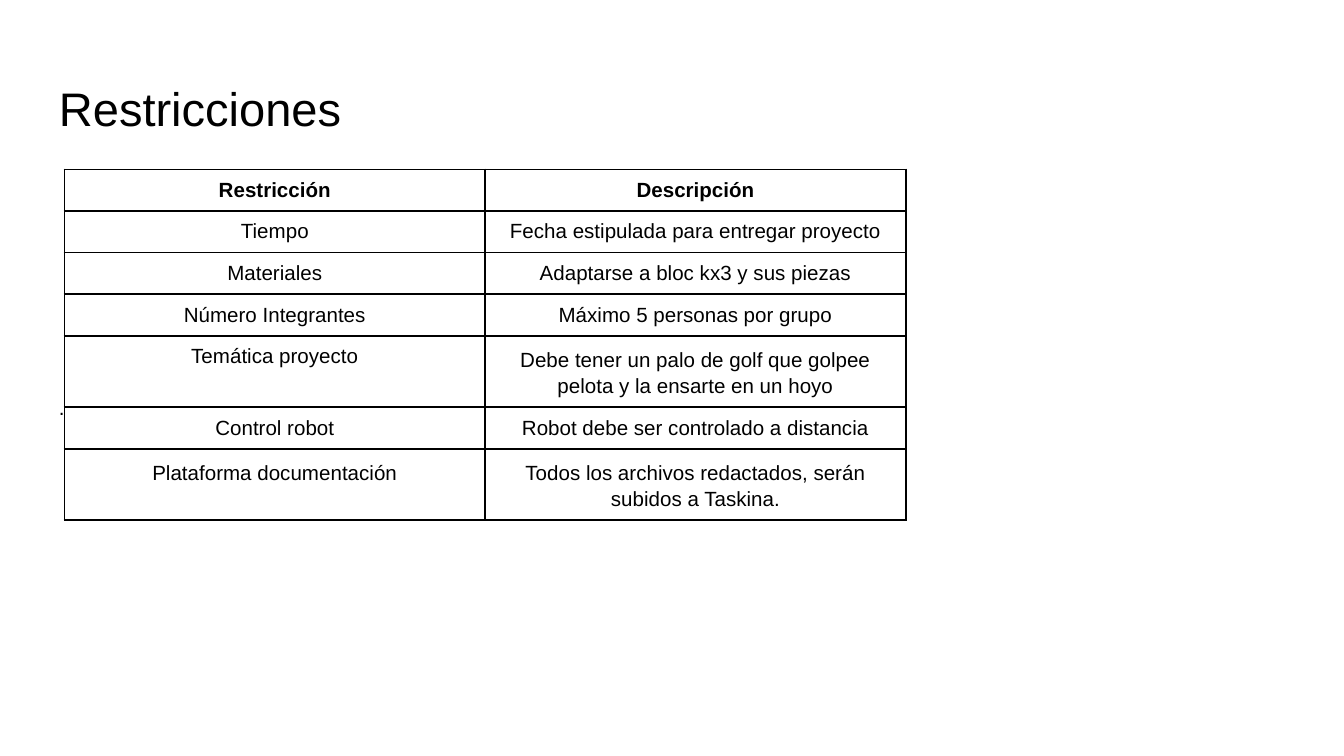
import pptx
import pptx.util
import pptx.dml.color
import pptx.enum.text
import pptx.oxml
import pptx.oxml.ns

BLACK = "000000"
MARGIN = pptx.util.Inches(0.07)
TOP = pptx.enum.text.MSO_ANCHOR.TOP
MIDDLE = pptx.enum.text.MSO_ANCHOR.MIDDLE
ROWS = [
    ("Restricción", "Descripción"),
    ("Tiempo", "Fecha estipulada para entregar proyecto"),
    ("Materiales", "Adaptarse a bloc kx3 y sus piezas"),
    ("Número Integrantes", "Máximo 5 personas por grupo"),
    ("Temática proyecto", "Debe tener un palo de golf que golpee pelota y la ensarte en un hoyo"),
    ("Control robot", "Robot debe ser controlado a distancia"),
    ("Plataforma documentación", "Todos los archivos redactados, serán subidos a Taskina."),
]
TALL_ROWS = (4, 6)
SPACED_CELLS = ((4, 1), (6, 0), (6, 1))


def format_text(paragraph, size, color, bold=False):
    font = paragraph.runs[0].font
    font.name = "Arial"
    font.size = pptx.util.Pt(size)
    font.bold = bold
    font.color.rgb = pptx.dml.color.RGBColor.from_string(color)


def add_borders(cell, color, width):
    properties = cell._tc.get_or_add_tcPr()
    for position, side in enumerate(("lnL", "lnR", "lnT", "lnB")):
        line = pptx.oxml.parse_xml(
            f'<a:{side} {pptx.oxml.ns.nsdecls("a")} w="{pptx.util.Pt(width)}">'
            f'<a:solidFill><a:srgbClr val="{color}"/></a:solidFill></a:{side}>'
        )
        properties.insert(position, line)


presentation = pptx.Presentation()
presentation.slide_width = pptx.util.Inches(10)
presentation.slide_height = presentation.slide_width * 9 // 16
slide = presentation.slides.add_slide(presentation.slide_layouts[6])

table_shape = slide.shapes.add_table(
    len(ROWS), 2,
    pptx.util.Inches(0.48), pptx.util.Inches(1.26),
    pptx.util.Inches(6.26), pptx.util.Inches(2.61),
)
table = table_shape.table
table.first_row = False
table.horz_banding = False
for column in table.columns:
    column.width = pptx.util.Inches(3.13)
for row_index, texts in enumerate(ROWS):
    table.rows[row_index].height = pptx.util.Inches(0.53 if row_index in TALL_ROWS else 0.31)
    for column_index, text in enumerate(texts):
        cell = table.cell(row_index, column_index)
        cell.margin_left = cell.margin_right = MARGIN
        cell.margin_top = cell.margin_bottom = MARGIN
        cell.fill.background()
        add_borders(cell, BLACK, 1)
        cell.text_frame.text = text
        paragraph = cell.text_frame.paragraphs[0]
        paragraph.alignment = pptx.enum.text.PP_ALIGN.CENTER
        if (row_index, column_index) in SPACED_CELLS:
            paragraph.line_spacing = 1.15
            paragraph.space_before = paragraph.space_after = pptx.util.Pt(12)
        format_text(paragraph, 11, BLACK, bold=row_index == 0)

for text, size, anchor, box in (
    ("Restricciones", 25.2, TOP, (0.34, 0.49, 9.32, 0.63)),
    (".", 11, MIDDLE, (0.34, 1.39, 3.28, 3.28)),
):
    shape = slide.shapes.add_textbox(*map(pptx.util.Inches, box))
    text_frame = shape.text_frame
    text_frame.word_wrap = True
    text_frame.vertical_anchor = anchor
    text_frame.margin_left = text_frame.margin_right = pptx.util.Inches(0.1)
    text_frame.margin_top = text_frame.margin_bottom = pptx.util.Inches(0.1)
    text_frame.text = text
    format_text(text_frame.paragraphs[0], size, BLACK)

presentation.save("out.pptx")
